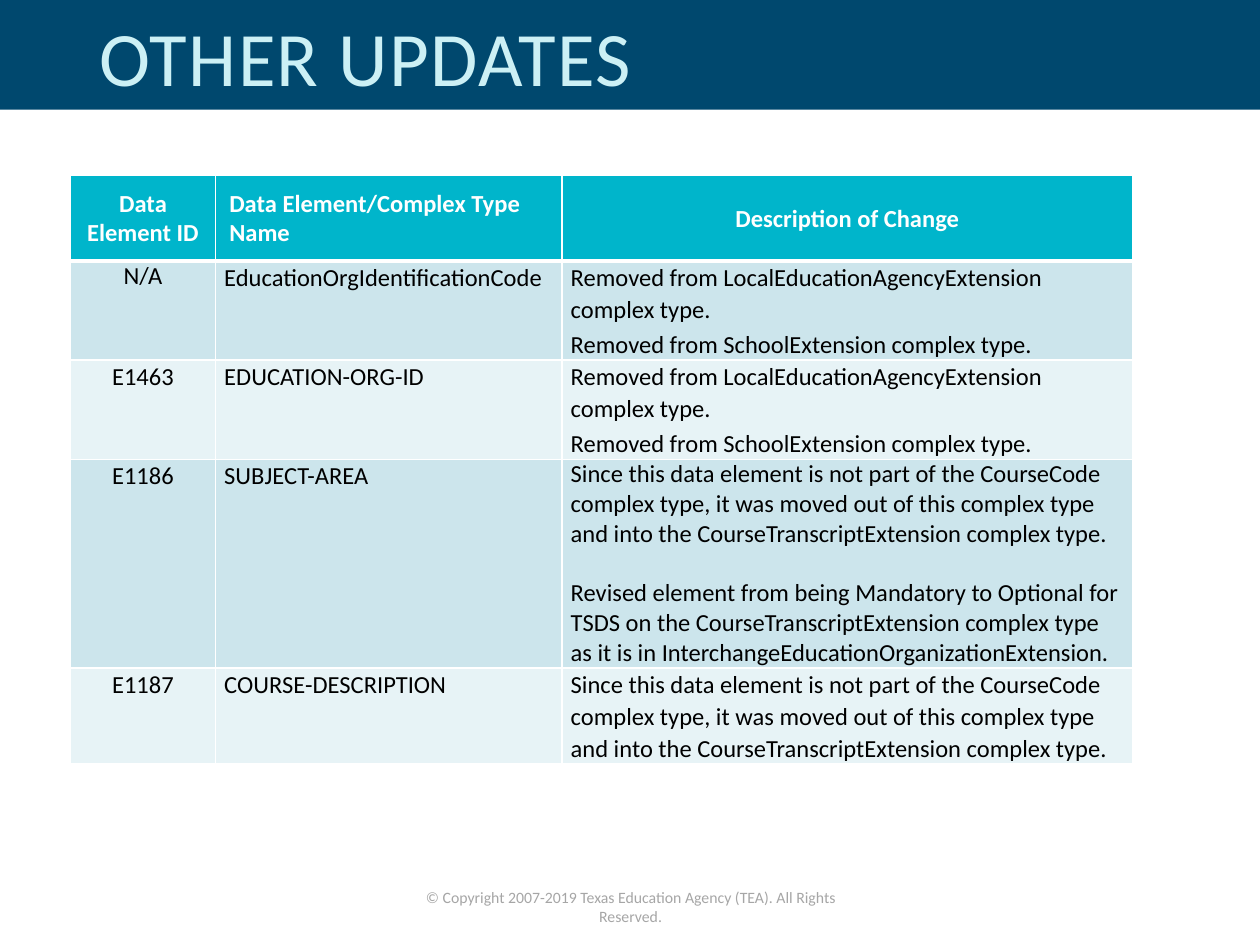
from lxml.etree import SubElement
from pptx import Presentation
from pptx.dml.color import RGBColor
from pptx.enum.shapes import MSO_SHAPE as Shape
from pptx.enum.text import MSO_ANCHOR as Anchor, PP_ALIGN as Align
from pptx.oxml.ns import qn
from pptx.util import Inches, Pt

COLORS = {
    "band": "00486E", "title": "CCF0F5", "footer": "A6A6A6",
    "header": "00B5CB", "odd": "CCE5EC", "even": "E7F3F6",
    "white": "FFFFFF", "black": "000000",
}
REMOVED = [
    "Removed from LocalEducationAgencyExtension complex type.",
    "Removed from SchoolExtension complex type.",
]
MOVED = ("Since this data element is not part of the CourseCode complex type, it was moved "
         "out of this complex type and into the CourseTranscriptExtension complex type.")
REVISED = ("Revised element from being Mandatory to Optional for TSDS on the "
           "CourseTranscriptExtension complex type as it is in "
           "InterchangeEducationOrganizationExtension.")

HEADINGS = [["Data", "Element ID"], ["Data Element/Complex Type Name"], ["Description of Change"]]
COLUMN_WIDTHS = [1.15, 2.75, 4.53]
HEADER_HEIGHT = 0.68
# ID, name, description, row height, line spacing and gap between description paragraphs
CHANGES = [
    ("N/A", "EducationOrgIdentificationCode", REMOVED, 0.78, 1.07, 2),
    ("E1463", "EDUCATION-ORG-ID", REMOVED, 0.78, 1.07, 2),
    ("E1186", "SUBJECT-AREA", [MOVED, REVISED], 1.65, 1.0, 17),
    ("E1187", "COURSE-DESCRIPTION", [MOVED], 0.76, 1.07, 2),
]


def color(name):
    return RGBColor.from_string(COLORS[name])


class SlideMaker:
    font_name = "Calibri"

    def __init__(self, page):
        self.page = page

    def fill_text(self, frame, lines, font, align=Align.LEFT, spacing=1.0, gap=0):
        frame.word_wrap = True
        for index, line in enumerate(lines):
            para = frame.add_paragraph() if index else frame.paragraphs[0]
            para.alignment, para.line_spacing = align, spacing
            if index:
                para.space_before = Pt(gap)
            span = para.add_run()
            span.text = line
            for key, value in {"name": self.font_name, "bold": False, **font}.items():
                if key == "color":
                    span.font.color.rgb = color(value)
                else:
                    setattr(span.font, key, value)

    def title(self, text, *place):
        title = self.page.shapes.title
        title.left, title.top, title.width, title.height = map(Inches, place)
        frame = title.text_frame
        frame.vertical_anchor = Anchor.MIDDLE
        self.fill_text(frame, [text], {"size": Pt(44), "color": "title"}, spacing=0.9)
        frame.paragraphs[0].runs[0].font._element.set("spc", "80")

    def band(self, *place):
        """Add the colour band behind the title."""
        band = self.page.shapes.add_shape(Shape.RECTANGLE, *map(Inches, place))
        band.shadow.inherit = False
        band.fill.solid()
        band.fill.fore_color.rgb = color("band")
        band.line.fill.background()
        self.page.shapes.title._element.addprevious(band._element)

    def footer(self, text, *place):
        box = self.page.shapes.add_textbox(*map(Inches, place))
        self.fill_text(box.text_frame, [text], {"size": Pt(9), "color": "footer"}, Align.CENTER)

    def border(self, cell, bottom):
        """Draw white lines around a cell, with the bottom width given in points."""
        properties = cell._tc.get_or_add_tcPr()
        for side, width in {"L": 1, "R": 1, "T": 1, "B": bottom}.items():
            line = SubElement(properties, qn(f"a:ln{side}"), w=str(Pt(width)))
            fill = SubElement(line, qn("a:solidFill"))
            SubElement(fill, qn("a:srgbClr"), val=COLORS["white"])

    def cell(self, cell, lines, fill, font, margins, anchor=Anchor.TOP, bottom=1, **layout):
        self.border(cell, bottom)
        cell.fill.solid()
        cell.fill.fore_color.rgb = color(fill)
        cell.vertical_anchor = anchor
        for side, margin in zip(("left", "top", "right", "bottom"), margins):
            setattr(cell, f"margin_{side}", Inches(margin))
        self.fill_text(cell.text_frame, lines, {"size": Pt(14), **font}, **layout)

    def table(self, left, top):
        heights = [HEADER_HEIGHT] + [change[3] for change in CHANGES]
        size = (sum(COLUMN_WIDTHS), sum(heights))
        table = self.page.shapes.add_table(
            len(heights), len(COLUMN_WIDTHS), *map(Inches, (left, top, *size))).table
        for column, width in zip(table.columns, COLUMN_WIDTHS):
            column.width = Inches(width)
        for row, height in zip(table.rows, heights):
            row.height = Inches(height)

        for index, lines in enumerate(HEADINGS):
            is_name = index == 1
            self.cell(table.cell(0, index), lines, "header", {"color": "white", "bold": True},
                      (0.11 if is_name else 0.01, 0.01, 0.01, 0), Anchor.MIDDLE, bottom=3,
                      align=Align.LEFT if is_name else Align.CENTER)

        for number, (code, name, description, _, spacing, gap) in enumerate(CHANGES, 1):
            columns = [([code], Align.CENTER, 1.0 if code == "N/A" else 1.07),
                       ([name], Align.LEFT, 1.07),
                       (description, Align.LEFT, spacing)]
            for index, (lines, align, line_spacing) in enumerate(columns):
                self.cell(table.cell(number, index), lines, "odd" if number % 2 else "even",
                          {"color": "black"}, (0.07, 0, 0.07, 0),
                          align=align, spacing=line_spacing, gap=gap)


def main():
    deck = Presentation()
    deck.slide_width, deck.slide_height = Inches(10), Inches(7.5)
    maker = SlideMaker(deck.slides.add_slide(deck.slide_layouts[5]))
    maker.band(0, 0, 10, 0.87)
    maker.title("OTHER UPDATES", 0.69, 0.05, 8, 0.87)
    maker.table(0.56, 1.39)
    maker.footer("© Copyright 2007-2019 Texas Education Agency (TEA). All Rights Reserved.",
                 3.04, 7, 3.93, 0.25)
    deck.save("out.pptx")


if __name__ == "__main__":
    main()
